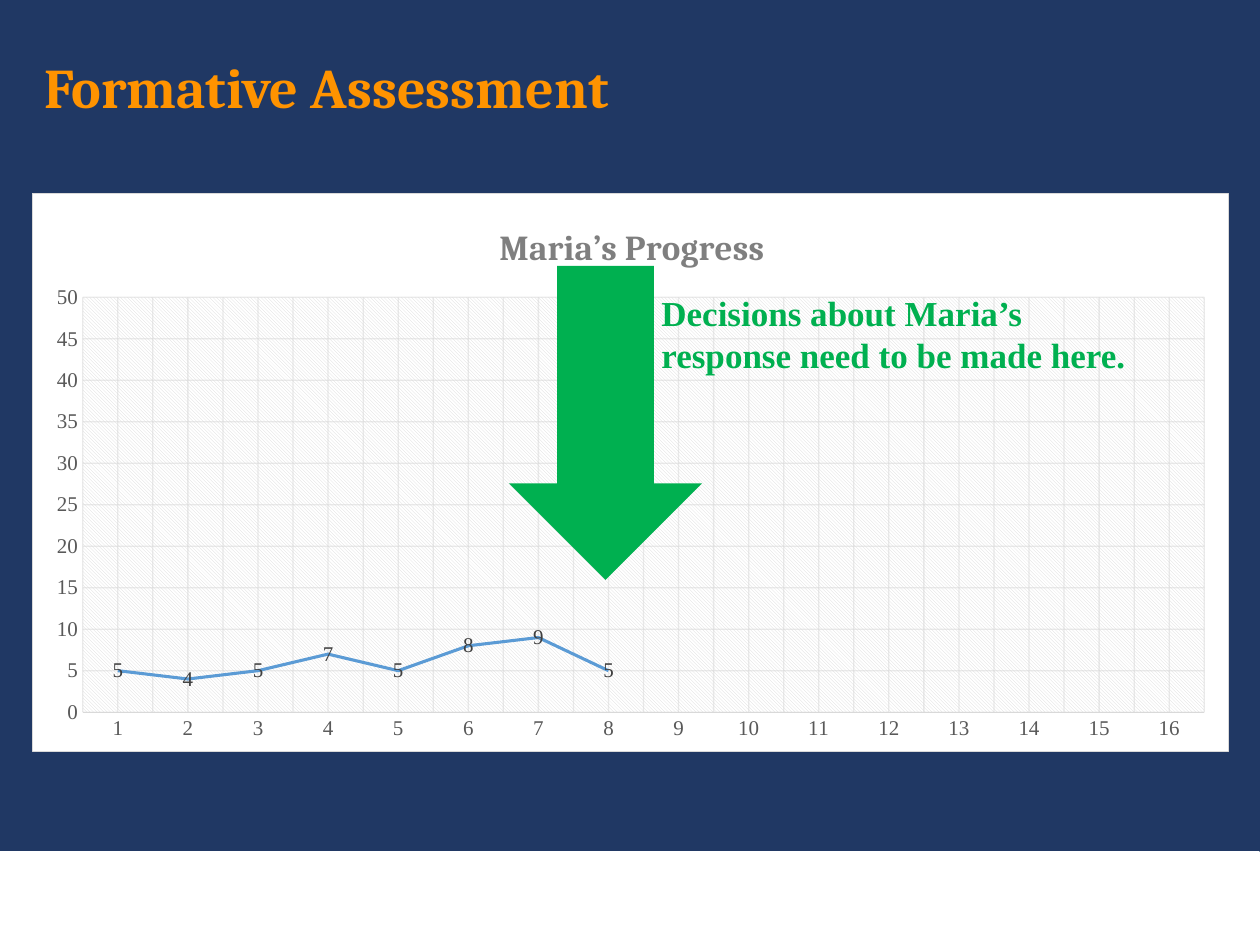
from copy import deepcopy

from pptx import Presentation
from pptx.chart.data import CategoryChartData
from pptx.dml.color import RGBColor
from pptx.enum.chart import XL_CHART_TYPE as ChartType, XL_LABEL_POSITION as LabelPosition
from pptx.enum.chart import XL_MARKER_STYLE as MarkerStyle, XL_TICK_MARK as TickMark
from pptx.enum.shapes import MSO_SHAPE as Preset
from pptx.enum.text import MSO_ANCHOR as Anchor
from pptx.oxml import parse_xml
from pptx.oxml.ns import qn
from pptx.util import Emu, Pt

HEADING = "Formative Assessment"
CHART_TITLE = "Maria’s Progress"
NOTE = "Decisions about Maria’s response need to be made here."
WEEKS = [str(week) for week in range(1, 17)]
SCORES = [5, 4, 5, 7, 5, 8, 9, 5] + [None] * 8

THEME = {
    "navy": "203864", "white": "FFFFFF", "orange": "FF9300", "green": "00B050",
    "blue": "5B9BD5", "grid": "D9D9D9", "axis": "595959", "label": "404040",
    "chart_title": "7F7F7F", "serif": "Times New Roman", "display": "Cambria",
    "heading_size": 32, "subhead_size": 20, "axis_size": 12,
}
BOXES = {
    "footer": (0, 852, 1259, 93),
    "heading": (32, 32, 1197, 101),
    "chart": (32, 193, 1197, 559),
    "arrow": (509, 266, 193, 314),
    "note": (649, 285, 512, 97),
}
PLOT = {"x": 0.042, "y": 0.186, "w": 0.938, "h": 0.744}
TITLE_SPOT = {"x": 0.385, "y": 0.045}
SCALE = 914400 // 126
CHART_NS = (
    'xmlns:c="http://schemas.openxmlformats.org/drawingml/2006/chart" '
    'xmlns:a="http://schemas.openxmlformats.org/drawingml/2006/main"'
)


def px(*lengths):
    return [Emu(round(length * SCALE)) for length in lengths]


def color(name):
    return RGBColor.from_string(THEME[name])


def style_font(font, face, size, tint, bold=False):
    values = {"name": THEME[face], "size": Pt(THEME[size]), "bold": bold}
    for key, value in values.items():
        setattr(font, key, value)
    font.color.rgb = color(tint)


def style_line(line, tint, width):
    line.color.rgb = color(tint)
    line.width = Pt(width)


def add_block(slide, box, preset, fill):
    shape = slide.shapes.add_shape(preset, *px(*BOXES[box]))
    shape.shadow.inherit = False
    shape.fill.solid()
    shape.fill.fore_color.rgb = color(fill)
    shape.line.fill.background()
    return shape


def add_text(slide, box, text, **font):
    shape = slide.shapes.add_textbox(*px(*BOXES[box]))
    frame = shape.text_frame
    frame.word_wrap = True
    paragraph = frame.paragraphs[0]
    run = paragraph.add_run()
    run.text = text
    style_font(run.font, bold=True, **font)
    return shape


def layout_xml(spot, inner=False):
    target = '<c:layoutTarget val="inner"/>' if inner else ""
    modes = "".join(f'<c:{key}Mode val="edge"/>' for key in ("x", "y"))
    values = "".join(f'<c:{key} val="{value}"/>' for key, value in spot.items())
    return parse_xml(
        f"<c:layout {CHART_NS}><c:manualLayout>{target}{modes}{values}"
        "</c:manualLayout></c:layout>"
    )


def set_layout(parent, layout, position):
    for old in parent.findall(qn("c:layout")):
        parent.remove(old)
    parent.insert(position, layout)


def style_grid(gridlines):
    line = gridlines.format.line
    style_line(line, "grid", 0.75)
    tint = line._ln.find(".//" + qn("a:srgbClr"))
    tint.append(parse_xml(f'<a:alpha {CHART_NS} val="54000"/>'))


def style_axis(axis):
    axis.major_tick_mark = axis.minor_tick_mark = TickMark.NONE
    axis.has_major_gridlines = True
    style_grid(axis.major_gridlines)
    style_font(axis.tick_labels.font, "serif", "axis_size", "axis")


def add_minor_grid(axis):
    axis.has_minor_gridlines = True
    major, minor = (axis._element.find(qn(f"c:{kind}Gridlines")) for kind in ("major", "minor"))
    minor.append(deepcopy(major.find(qn("c:spPr"))))


def paint_chart(chart):
    area = parse_xml(
        f'<c:spPr {CHART_NS}><a:solidFill><a:srgbClr val="{THEME["white"]}"/></a:solidFill>'
        f'<a:ln w="9525"><a:solidFill><a:srgbClr val="{THEME["grid"]}"/></a:solidFill></a:ln></c:spPr>'
    )
    hatch = parse_xml(
        f'<c:spPr {CHART_NS}><a:pattFill prst="ltDnDiag">'
        f'<a:fgClr><a:srgbClr val="{THEME["grid"]}"/></a:fgClr>'
        f'<a:bgClr><a:srgbClr val="{THEME["white"]}"/></a:bgClr>'
        "</a:pattFill><a:ln><a:noFill/></a:ln></c:spPr>"
    )
    root = chart._chartSpace
    root.find(qn("c:chart")).addnext(area)
    plot_area = root.find(".//" + qn("c:plotArea"))
    plot_area.append(hatch)
    set_layout(plot_area, layout_xml(PLOT, inner=True), 0)
    set_layout(root.find(".//" + qn("c:title")), layout_xml(TITLE_SPOT), 1)


def add_progress_chart(slide):
    data = CategoryChartData()
    data.categories = WEEKS
    data.add_series("Series 1", SCORES)
    chart = slide.shapes.add_chart(ChartType.LINE, *px(*BOXES["chart"]), data).chart
    style_font(chart.font, "serif", "axis_size", "axis")
    chart.has_legend = False
    chart.has_title = True
    chart.chart_title.include_in_layout = False
    run = chart.chart_title.text_frame.paragraphs[0].add_run()
    run.text = CHART_TITLE
    style_font(run.font, "display", "subhead_size", "chart_title", bold=True)

    for axis in (chart.category_axis, chart.value_axis):
        style_axis(axis)
    add_minor_grid(chart.category_axis)
    style_line(chart.category_axis.format.line, "grid", 0.75)
    chart.value_axis.format.line.fill.background()
    for key, value in {"minimum_scale": 0, "maximum_scale": 50, "major_unit": 5}.items():
        setattr(chart.value_axis, key, value)

    plot = chart.plots[0]
    plot.vary_by_categories = False
    series = plot.series[0]
    series.smooth = False
    series.marker.style = MarkerStyle.NONE
    style_line(series.format.line, "blue", 1.75)
    labels = series.data_labels
    labels.show_value = True
    labels.position = LabelPosition.CENTER
    style_font(labels.font, "serif", "axis_size", "label")
    paint_chart(chart)


def main():
    presentation = Presentation()
    presentation.slide_width, presentation.slide_height = px(1260, 945)
    slide = presentation.slides.add_slide(presentation.slide_layouts[6])
    slide.background.fill.solid()
    slide.background.fill.fore_color.rgb = color("navy")

    footer = add_block(slide, "footer", Preset.RECTANGLE, "white")
    style_line(footer.line, "white", 1)
    heading = add_text(slide, "heading", HEADING, face="display", size="heading_size", tint="orange")
    heading.fill.solid()
    heading.fill.fore_color.rgb = color("navy")
    heading.text_frame.vertical_anchor = Anchor.MIDDLE
    heading.text_frame.paragraphs[0].line_spacing = 1.1
    add_progress_chart(slide)
    add_block(slide, "arrow", Preset.DOWN_ARROW, "green")
    add_text(slide, "note", NOTE, face="serif", size="subhead_size", tint="green")
    presentation.save("out.pptx")


if __name__ == "__main__":
    main()
